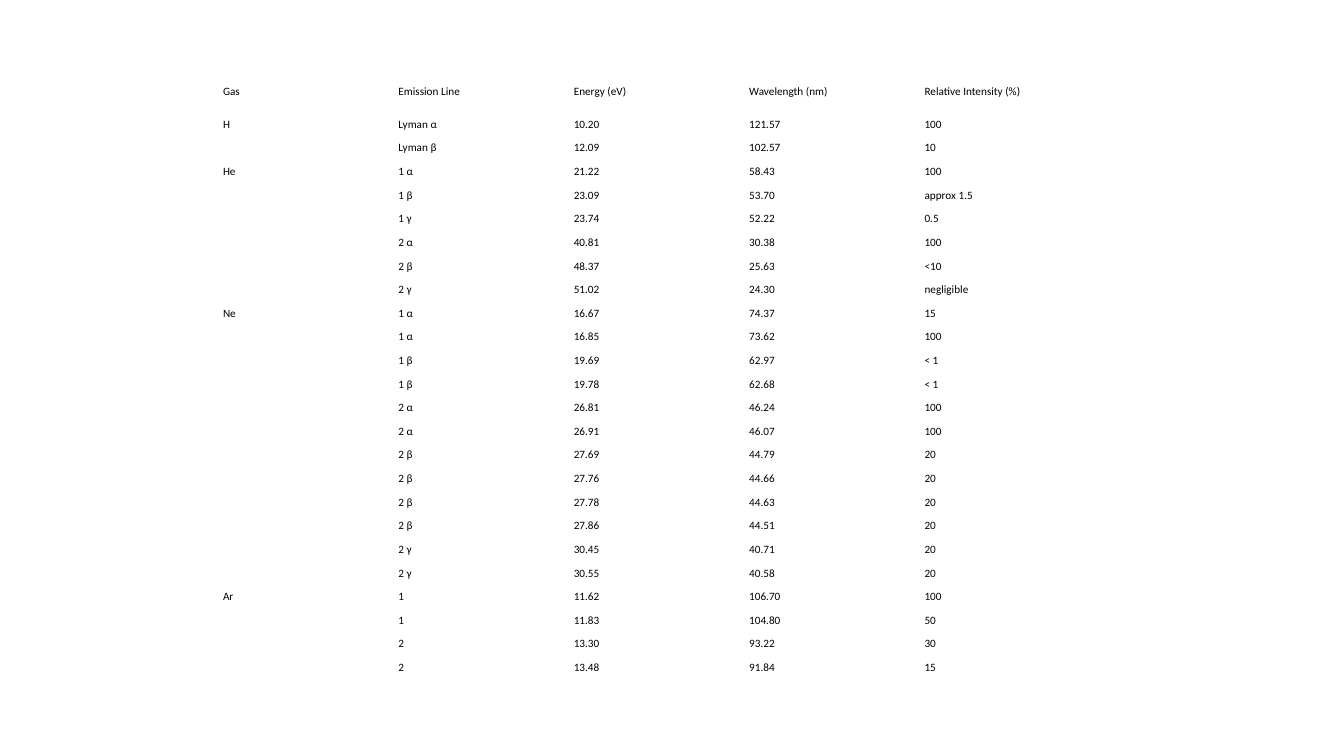
from dataclasses import dataclass

from lxml.etree import SubElement
from pptx import Presentation
from pptx.dml.color import RGBColor
from pptx.enum.text import MSO_ANCHOR
from pptx.oxml.ns import qn
from pptx.util import Cm, Pt

HEADINGS = ("Gas", "Emission Line", "Energy (eV)", "Wavelength (nm)",
            "Relative Intensity (%)")

# Gas: (emission line, energy, wavelength, relative intensity)
EMISSIONS = {
    "H": [
        ("Lyman α", "10.20", "121.57", "100"),
        ("Lyman β", "12.09", "102.57", "10"),
    ],
    "He": [
        ("1 α", "21.22", "58.43", "100"),
        ("1 β", "23.09", "53.70", "approx 1.5"),
        ("1 γ", "23.74", "52.22", "0.5"),
        ("2 α", "40.81", "30.38", "100"),
        ("2 β", "48.37", "25.63", "<10"),
        ("2 γ", "51.02", "24.30", "negligible"),
    ],
    "Ne": [
        ("1 α", "16.67", "74.37", "15"),
        ("1 α", "16.85", "73.62", "100"),
        ("1 β", "19.69", "62.97", "< 1"),
        ("1 β", "19.78", "62.68", "< 1"),
        ("2 α", "26.81", "46.24", "100"),
        ("2 α", "26.91", "46.07", "100"),
        ("2 β", "27.69", "44.79", "20"),
        ("2 β", "27.76", "44.66", "20"),
        ("2 β", "27.78", "44.63", "20"),
        ("2 β", "27.86", "44.51", "20"),
        ("2 γ", "30.45", "40.71", "20"),
        ("2 γ", "30.55", "40.58", "20"),
    ],
    "Ar": [
        ("1", "11.62", "106.70", "100"),
        ("1", "11.83", "104.80", "50"),
        ("2", "13.30", "93.22", "30"),
        ("2", "13.48", "91.84", "15"),
    ],
}


@dataclass(frozen=True)
class Theme:
    font: str = "Calibri"
    size: Pt = Pt(8)
    ink: RGBColor = RGBColor(0, 0, 0)


THEME = Theme()
LEFT, TOP, WIDTH, HEIGHT = Cm(5.49), Cm(1.8), Cm(22.1), Cm(15.34)
HEADER_HEIGHT = Cm(1.04)
SIDE_MARGIN, END_MARGIN = Cm(0.13), Cm(0.05)


def emission_rows():
    """Name each gas only beside its first emission line."""
    return [(gas if index == 0 else "", *line)
            for gas, lines in EMISSIONS.items()
            for index, line in enumerate(lines)]


def fill_cell(cell, text):
    cell.fill.background()
    cell.vertical_anchor = MSO_ANCHOR.MIDDLE
    cell.margin_left = cell.margin_right = SIDE_MARGIN
    cell.margin_top = cell.margin_bottom = END_MARGIN
    paragraph = cell.text_frame.paragraphs[0]
    if text:
        paragraph.text = text
    else:
        # An empty cell takes its line height from the end mark.
        SubElement(paragraph._p, qn("a:endParaRPr"), sz=str(int(THEME.size.pt * 100)))
    paragraph.font.name = THEME.font
    paragraph.font.size = THEME.size
    paragraph.font.color.rgb = THEME.ink


def add_emission_table(slide):
    rows = [HEADINGS, *emission_rows()]
    table = slide.shapes.add_table(
        len(rows), len(HEADINGS), LEFT, TOP, WIDTH, HEIGHT).table
    table.first_row = table.horz_banding = False
    line_height = (HEIGHT - HEADER_HEIGHT) // (len(rows) - 1)
    for row_index, values in enumerate(rows):
        table.rows[row_index].height = line_height if row_index else HEADER_HEIGHT
        for column_index, text in enumerate(values):
            fill_cell(table.cell(row_index, column_index), text)


def main():
    presentation = Presentation()
    presentation.slide_width, presentation.slide_height = Cm(33.87), Cm(19.05)
    slide = presentation.slides.add_slide(presentation.slide_layouts[6])
    add_emission_table(slide)
    presentation.save("out.pptx")


if __name__ == "__main__":
    main()
